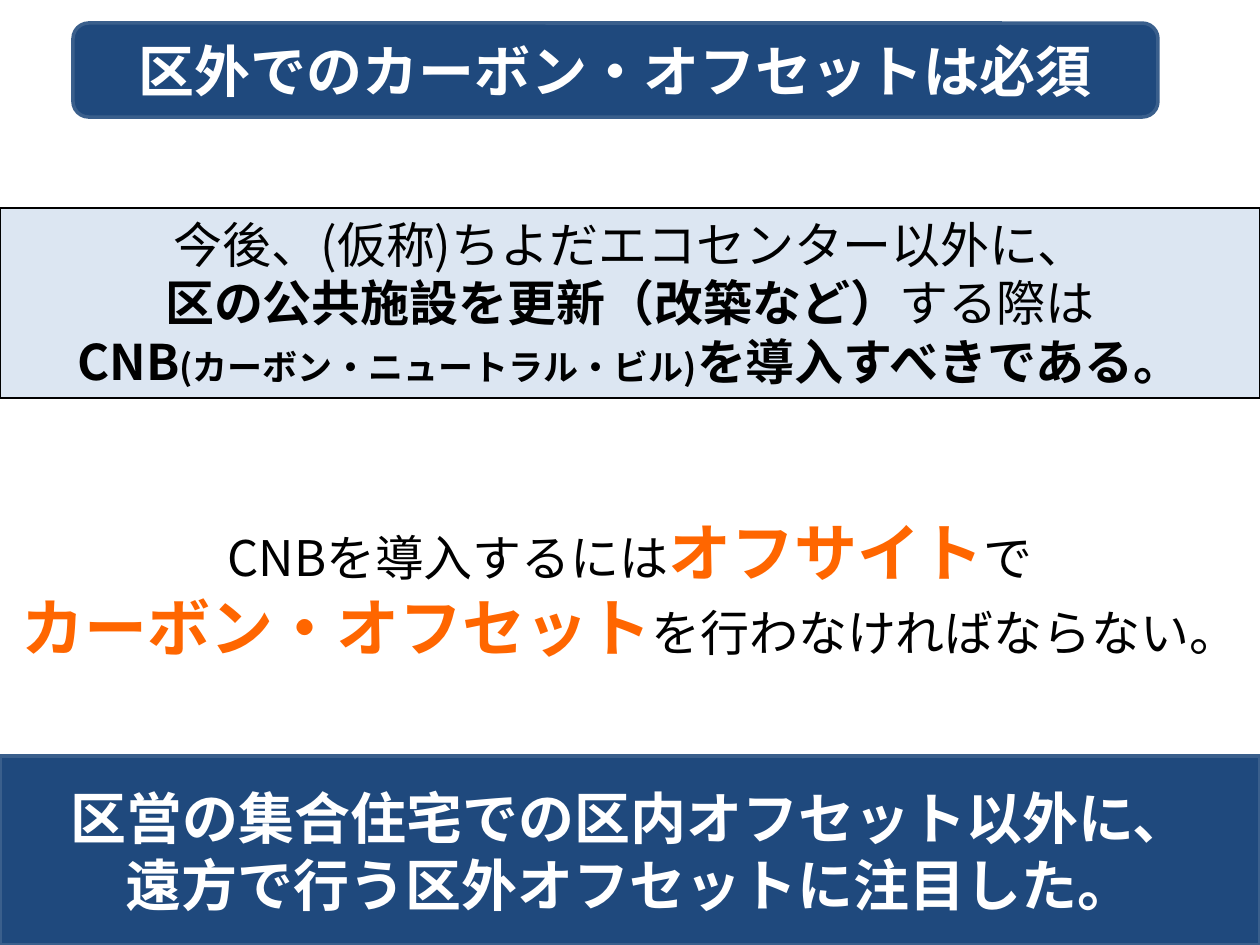
from dataclasses import dataclass

from lxml import etree
from pptx import Presentation
from pptx.dml.color import RGBColor
from pptx.enum.shapes import MSO_SHAPE
from pptx.enum.text import MSO_ANCHOR, MSO_AUTO_SIZE, PP_ALIGN
from pptx.oxml.ns import qn
from pptx.util import Emu, Pt

RECTANGLE = MSO_SHAPE.RECTANGLE
ROUNDED = MSO_SHAPE.ROUNDED_RECTANGLE
TOP, MIDDLE = MSO_ANCHOR.TOP, MSO_ANCHOR.MIDDLE
CENTER = PP_ALIGN.CENTER
NO_AUTOFIT = MSO_AUTO_SIZE.NONE
EMU_PER_PX = 914400 / 126
WIDTH, HEIGHT = 1260, 945
TITLE_ONLY = 5


@dataclass(frozen=True)
class Theme:
    font: str = "Noto Sans CJK JP"
    navy: str = "1F497D"
    navy_edge: str = "3A5F8C"
    pale: str = "DCE6F2"
    orange: str = "FF6600"
    black: str = "000000"
    white: str = "FFFFFF"
    heading: int = 32
    accent: int = 36
    body: int = 28
    small: int = 20
    thick: float = 2
    thin: float = 0.75


def px(length):
    return Emu(round(length * EMU_PER_PX))


def rgb(color):
    return RGBColor.from_string(color)


class SlideBuilder:
    def __init__(self, slide, theme):
        self.slide = slide
        self.theme = theme

    def panel(self, kind, area, fill, edge, weight):
        shape = self.slide.shapes.add_shape(kind, *map(px, area))
        shape.shadow.inherit = False
        shape.fill.solid()
        shape.fill.fore_color.rgb = rgb(fill)
        shape.line.color.rgb = rgb(edge)
        shape.line.width = Pt(weight)
        return shape

    def navy_panel(self, kind, area):
        theme = self.theme
        return self.panel(kind, area, theme.navy, theme.navy_edge, theme.thick)

    def title(self, area, text):
        banner = self.navy_panel(ROUNDED, area)
        title = self.slide.shapes.title
        title.left, title.top, title.width, title.height = map(px, area)
        banner.element.addnext(title.element)
        self.heading(title, [text])

    def text_box(self, area, lines):
        box = self.slide.shapes.add_textbox(*map(px, area))
        self.body(box, lines)

    def heading(self, shape, texts):
        theme = self.theme
        lines = [[(text, {})] for text in texts]
        self.fill_text(shape, lines, MIDDLE, theme.heading, theme.white, True)

    def body(self, shape, lines):
        theme = self.theme
        self.fill_text(shape, lines, TOP, theme.body, theme.black, False)

    def fill_text(self, shape, lines, anchor, size, color, bold):
        frame = shape.text_frame
        frame.word_wrap = True
        frame.auto_size = NO_AUTOFIT
        frame.vertical_anchor = anchor
        for index, spans in enumerate(lines):
            para = frame.add_paragraph() if index else frame.paragraphs[0]
            para.alignment = CENTER
            self.paragraph_font(para, size, color, bold)
            for text, changes in spans:
                self.span(para, text, **changes)

    def paragraph_font(self, para, size, color, bold):
        font = para.font
        font.name = self.theme.font
        font.size = Pt(size)
        font.bold = bold
        font.color.rgb = rgb(color)
        properties = para._p.find(".//" + qn("a:defRPr"))
        etree.SubElement(properties, qn("a:ea"), typeface=self.theme.font)

    def span(self, para, text, size=None, color=None, bold=None):
        run = para.add_run()
        run.text = text
        if size:
            run.font.size = Pt(size)
        if color:
            run.font.color.rgb = rgb(color)
        if bold is not None:
            run.font.bold = bold


def main():
    theme = Theme()
    deck = Presentation()
    deck.slide_width, deck.slide_height = px(WIDTH), px(HEIGHT)
    slide = deck.slides.add_slide(deck.slide_layouts[TITLE_ONLY])
    builder = SlideBuilder(slide, theme)

    plain = {}
    strong = {"bold": True}
    strong_small = {"bold": True, "size": theme.small}
    accent = {"bold": True, "size": theme.accent, "color": theme.orange}

    builder.title((73, 23, 1085, 94), "区外でのカーボン・オフセットは必須")

    builder.text_box((0, 507, WIDTH, 165), [
        [("CNBを導入するには", plain), ("オフサイト", accent), ("で", plain)],
        [("カーボン・オフセット", accent), ("を行わなければならない。", plain)],
    ])

    proposal = builder.panel(
        RECTANGLE, (0, 208, WIDTH, 190), theme.pale, theme.black, theme.thin)
    builder.body(proposal, [
        [("今後、(仮称)ちよだエコセンター以外に、", plain)],
        [("区の公共施設を更新（改築など）", strong), ("する際は", plain)],
        [("CNB", strong), ("(カーボン・ニュートラル・ビル)", strong_small),
         ("を導入すべきである。", strong)],
    ])

    conclusion = builder.navy_panel(RECTANGLE, (0, 756, WIDTH, 189))
    builder.heading(conclusion, [
        "区営の集合住宅での区内オフセット以外に、",
        "遠方で行う区外オフセットに注目した。",
    ])

    deck.save("out.pptx")


if __name__ == "__main__":
    main()
